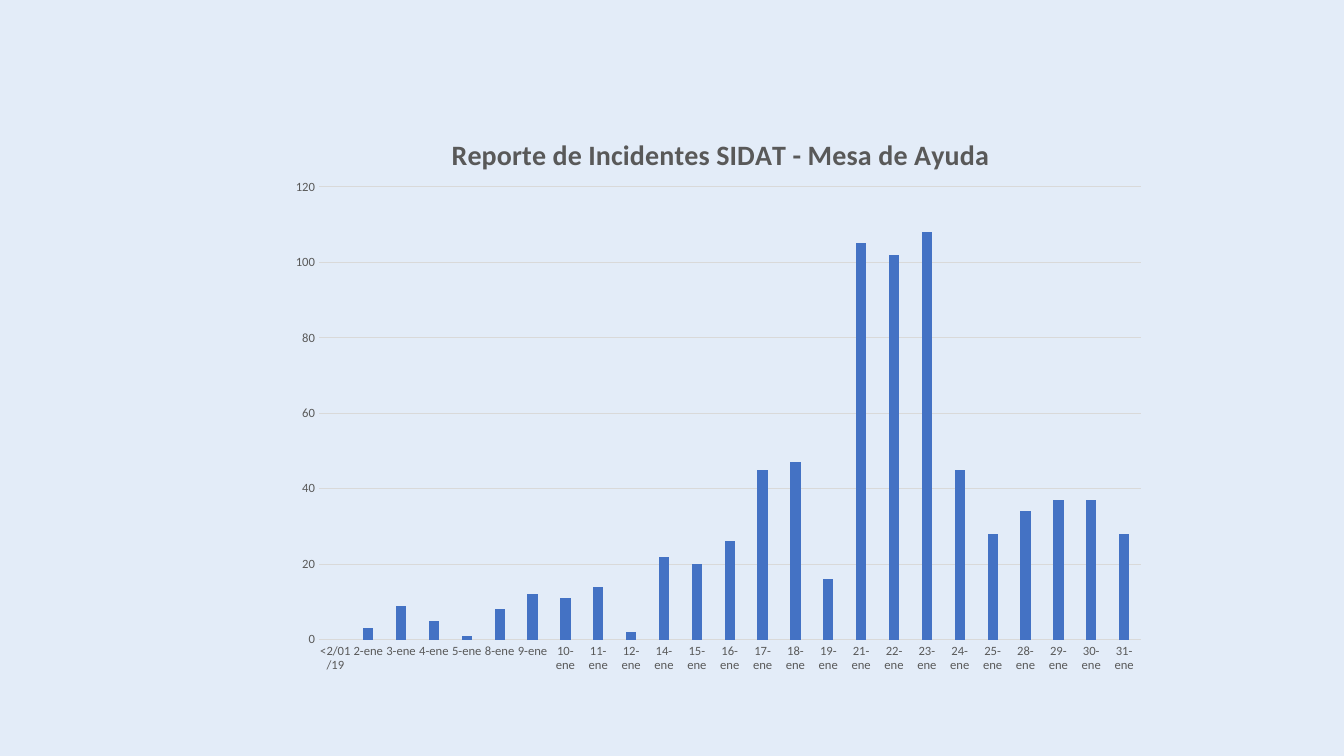
from dataclasses import dataclass

import lxml.etree
import pptx
import pptx.chart.data
import pptx.dml.color
import pptx.enum.chart
import pptx.oxml
import pptx.oxml.ns
import pptx.util


@dataclass(frozen=True)
class Theme:
    """Colours, font and type sizes of the deck."""

    background: str = "E3ECF8"
    bars: str = "4472C4"
    text: str = "595959"
    lines: str = "D9D9D9"
    font: str = "Calibri"
    title_size: int = 20
    label_size: int = 9
    line_width: float = 0.75


THEME = Theme()
TITLE = "Reporte de Incidentes SIDAT - Mesa de Ayuda"
FIRST_DAY = "<2/01/19"
INCIDENTS = {
    2: 3, 3: 9, 4: 5, 5: 1, 8: 8, 9: 12, 10: 11, 11: 14, 12: 2,
    14: 22, 15: 20, 16: 26, 17: 45, 18: 47, 19: 16,
    21: 105, 22: 102, 23: 108, 24: 45, 25: 28,
    28: 34, 29: 37, 30: 37, 31: 28,
}


def colour(code):
    """Return the colour for a hexadecimal code."""
    return pptx.dml.color.RGBColor.from_string(code)


def style_font(font, size, bold=False):
    """Apply the theme's font at the given size."""
    font.name = THEME.font
    font.size = pptx.util.Pt(size)
    font.bold = bold
    font.color.rgb = colour(THEME.text)


def style_line(line):
    """Give an axis or grid line the theme's thin grey."""
    line.color.rgb = colour(THEME.lines)
    line.width = pptx.util.Pt(THEME.line_width)


def set_layout(element, index, **fractions):
    """Place a chart part by fractions of the chart area."""
    for previous in element.findall(pptx.oxml.ns.qn("c:layout")):
        element.remove(previous)
    layout = pptx.oxml.parse_xml(f"<c:layout {pptx.oxml.ns.nsdecls('c')}/>")
    manual = lxml.etree.SubElement(layout, pptx.oxml.ns.qn("c:manualLayout"))
    settings = {"xMode": "edge", "yMode": "edge", **fractions}
    if "w" in fractions:
        settings = {"layoutTarget": "inner", **settings}
    for name, value in settings.items():
        lxml.etree.SubElement(manual, pptx.oxml.ns.qn(f"c:{name}"), val=str(value))
    element.insert(index, layout)


def style_axes(chart):
    """Format both axes and the horizontal grid."""
    for axis in (chart.category_axis, chart.value_axis):
        axis.major_tick_mark = pptx.enum.chart.XL_TICK_MARK.NONE
        axis.minor_tick_mark = pptx.enum.chart.XL_TICK_MARK.NONE
        style_font(axis.tick_labels.font, THEME.label_size)
    style_line(chart.category_axis.format.line)
    values = chart.value_axis
    values.minimum_scale, values.maximum_scale, values.major_unit = 0, 120, 20
    values.format.line.fill.background()
    values.has_major_gridlines = True
    style_line(values.major_gridlines.format.line)


def add_title(chart):
    """Write the chart title above the bars."""
    chart.has_title = True
    paragraph = chart.chart_title.text_frame.paragraphs[0]
    paragraph.text = TITLE
    style_font(paragraph.runs[0].font, THEME.title_size, bold=True)
    chart.chart_title.include_in_layout = False
    set_layout(chart.chart_title._element, 1, x=0.19, y=0.04)


def add_incident_chart(page, left, top, width, height):
    """Draw the daily incident columns in the given box."""
    data = pptx.chart.data.CategoryChartData()
    data.categories = [FIRST_DAY] + [f"{day}-ene" for day in INCIDENTS]
    data.add_series("Series 1", [None, *INCIDENTS.values()])
    kind = pptx.enum.chart.XL_CHART_TYPE.COLUMN_CLUSTERED
    chart = page.shapes.add_chart(kind, left, top, width, height, data).chart
    chart.has_legend = False
    chart.font.name = THEME.font
    add_title(chart)
    style_axes(chart)
    plot = chart.plots[0]
    plot.gap_width = 219
    plot.overlap = -27
    plot.vary_by_categories = False
    fill = plot.series[0].format.fill
    fill.solid()
    fill.fore_color.rgb = colour(THEME.bars)
    plot_area = chart._chartSpace.chart.plotArea
    set_layout(plot_area, 0, x=0.045, y=0.139, w=0.934, h=0.784)


def add_report_page(deck):
    """Add the report slide with its background and chart."""
    page = deck.slides.add_slide(deck.slide_layouts[6])
    fill = page.background.fill
    fill.solid()
    fill.fore_color.rgb = colour(THEME.background)
    box = [pptx.util.Cm(length) for length in (7.04, 2.69, 22.17, 14.55)]
    add_incident_chart(page, *box)


def main():
    """Build and save the deck."""
    deck = pptx.Presentation()
    deck.slide_width = pptx.util.Cm(33.87)
    deck.slide_height = pptx.util.Cm(19.05)
    add_report_page(deck)
    deck.save("out.pptx")


if __name__ == "__main__":
    main()
